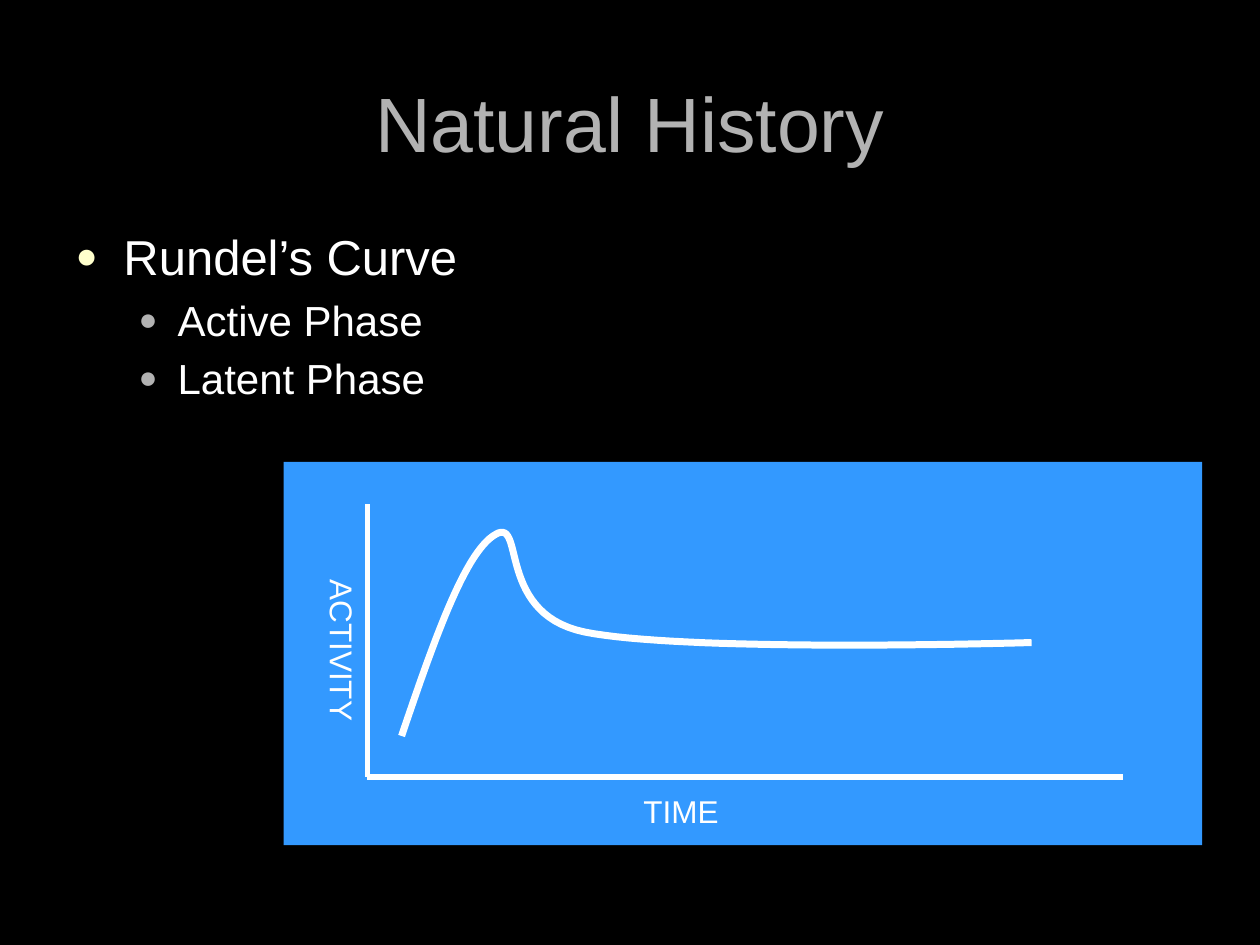
from dataclasses import dataclass

from lxml import etree
from pptx import Presentation
from pptx import util as u
from pptx.dml.color import RGBColor
from pptx.enum import shapes, text
from pptx.oxml import ns

COLUMNS, ROWS = 120, 90


@dataclass(frozen=True)
class Theme:
    font: str = "Arial"
    background: str = "000000"
    ink: str = "FFFFFF"
    muted: str = "B2B2B2"
    bullet: str = "FFFFCC"
    panel: str = "3399FF"
    title_size: int = 44
    list_sizes: tuple = (28, 24)
    label_size: int = 18
    axis_width: int = 3
    curve_width: int = 4


def bezier_points(start, segments, steps=30):
    """Sample a chain of cubic segments, each (control, control, end)."""
    points = [start]
    for first, second, end in segments:
        for step in range(1, steps + 1):
            t = step / steps
            weights = ((1 - t) ** 3, 3 * t * (1 - t) ** 2, 3 * t * t * (1 - t), t ** 3)
            points.append(tuple(
                sum(weight * value for weight, value in zip(weights, values))
                for values in zip(start, first, second, end)))
        start = end
    return points


class SlideBuilder:
    """Places styled elements on a slide; lengths are grid columns and rows."""

    def __init__(self, presentation, theme):
        self.theme = theme
        self.cell_width = presentation.slide_width / COLUMNS
        self.cell_height = presentation.slide_height / ROWS
        self.slide = presentation.slides.add_slide(presentation.slide_layouts[1])
        self.paint(self.slide.background.fill, theme.background)

    def grid(self, *lengths):
        """Turn alternating columns and rows into slide units."""
        cells = (self.cell_width, self.cell_height)
        return [u.Emu(round(length * cells[i % 2])) for i, length in enumerate(lengths)]

    def paint(self, fill, color):
        fill.solid()
        fill.fore_color.rgb = RGBColor.from_string(color)

    def style(self, paragraph, size, color):
        paragraph.font.name = self.theme.font
        paragraph.font.size = u.Pt(size)
        paragraph.font.color.rgb = RGBColor.from_string(color)

    def place(self, shape, box):
        shape.left, shape.top, shape.width, shape.height = self.grid(*box)

    def title(self, box, words):
        shape = self.slide.shapes.title
        self.place(shape, box)
        frame = shape.text_frame
        frame.text = words
        frame.auto_size = text.MSO_AUTO_SIZE.NONE
        frame.vertical_anchor = text.MSO_ANCHOR.MIDDLE
        frame.paragraphs[0].alignment = text.PP_ALIGN.CENTER
        self.style(frame.paragraphs[0], self.theme.title_size, self.theme.muted)

    def bullets(self, box, items):
        shape = self.slide.placeholders[1]
        self.place(shape, box)
        frame = shape.text_frame
        frame.text = "\n".join(words for level, words in items)
        frame.auto_size = text.MSO_AUTO_SIZE.NONE
        colors = (self.theme.bullet, self.theme.muted)
        for paragraph, (level, words) in zip(frame.paragraphs, items):
            paragraph.level = level
            self.bullet(paragraph, colors[level], *((0.38, -0.38), (0.81, -0.31))[level])
            self.style(paragraph, self.theme.list_sizes[level], self.theme.ink)
        frame.paragraphs[0].space_before = u.Pt(0)

    def bullet(self, paragraph, color, margin, indent):
        properties = paragraph._p.get_or_add_pPr()
        properties.set("marL", str(u.Inches(margin)))
        properties.set("indent", str(u.Inches(indent)))
        bullet_color = etree.SubElement(properties, ns.qn("a:buClr"))
        etree.SubElement(bullet_color, ns.qn("a:srgbClr"), val=color)
        etree.SubElement(properties, ns.qn("a:buSzPct"), val="75000")
        etree.SubElement(properties, ns.qn("a:buFont"), typeface=self.theme.font)
        etree.SubElement(properties, ns.qn("a:buChar"), char="●")

    def panel(self, box):
        shape = self.slide.shapes.add_shape(
            shapes.MSO_SHAPE.RECTANGLE, *self.grid(*box))
        shape.shadow.inherit = False
        self.paint(shape.fill, self.theme.panel)
        shape.line.fill.background()

    def stroke(self, line, width):
        self.paint(line.fill, self.theme.ink)
        line.width = u.Pt(width)

    def axis(self, start, end):
        line = self.slide.shapes.add_connector(
            shapes.MSO_CONNECTOR.STRAIGHT, *self.grid(*start, *end))
        self.stroke(line.line, self.theme.axis_width)
        etree.SubElement(line._element.spPr, ns.qn("a:effectLst"))

    def label(self, box, words, rotation=0):
        shape = self.slide.shapes.add_textbox(*self.grid(*box))
        shape.rotation = rotation
        frame = shape.text_frame
        frame.word_wrap = True
        frame.auto_size = text.MSO_AUTO_SIZE.SHAPE_TO_FIT_TEXT
        frame.text = words
        self.style(frame.paragraphs[0], self.theme.label_size, self.theme.ink)

    def curve(self, start, segments):
        points = [self.grid(*point) for point in bezier_points(start, segments)]
        builder = self.slide.shapes.build_freeform(*points[0])
        builder.add_line_segments(points[1:], close=False)
        shape = builder.convert_to_shape()
        shape.shadow.inherit = False
        shape.fill.background()
        self.stroke(shape.line, self.theme.curve_width)


def main():
    presentation = Presentation()
    presentation.slide_width, presentation.slide_height = u.Inches(10), u.Inches(7.5)
    builder = SlideBuilder(presentation, Theme())
    builder.title((6, 4.1, 108, 15), "Natural History")
    builder.bullets((6, 21, 53, 59.4), [
        (0, "Rundel’s Curve"), (1, "Active Phase"), (1, "Latent Phase")])

    builder.panel((27, 44, 87.5, 36.5))
    origin = (35, 74)
    builder.axis((35, 48), origin)
    builder.axis(origin, (107, 74))
    builder.label((60.1, 74.8, 23, 4.8), "TIME")
    builder.label((21.1, 63.1, 23, 4.8), "ACTIVITY", rotation=90)
    builder.curve((38.25, 70.1), [
        ((41.25, 61.3), (44.25, 52.55), (47.2, 50.9)),
        ((50.05, 49.2), (47.2, 58.45), (55.7, 60.2)),
        ((64.2, 61.9), (89.65, 61.45), (98.25, 61.2)),
    ])
    presentation.save("out.pptx")


if __name__ == "__main__":
    main()
